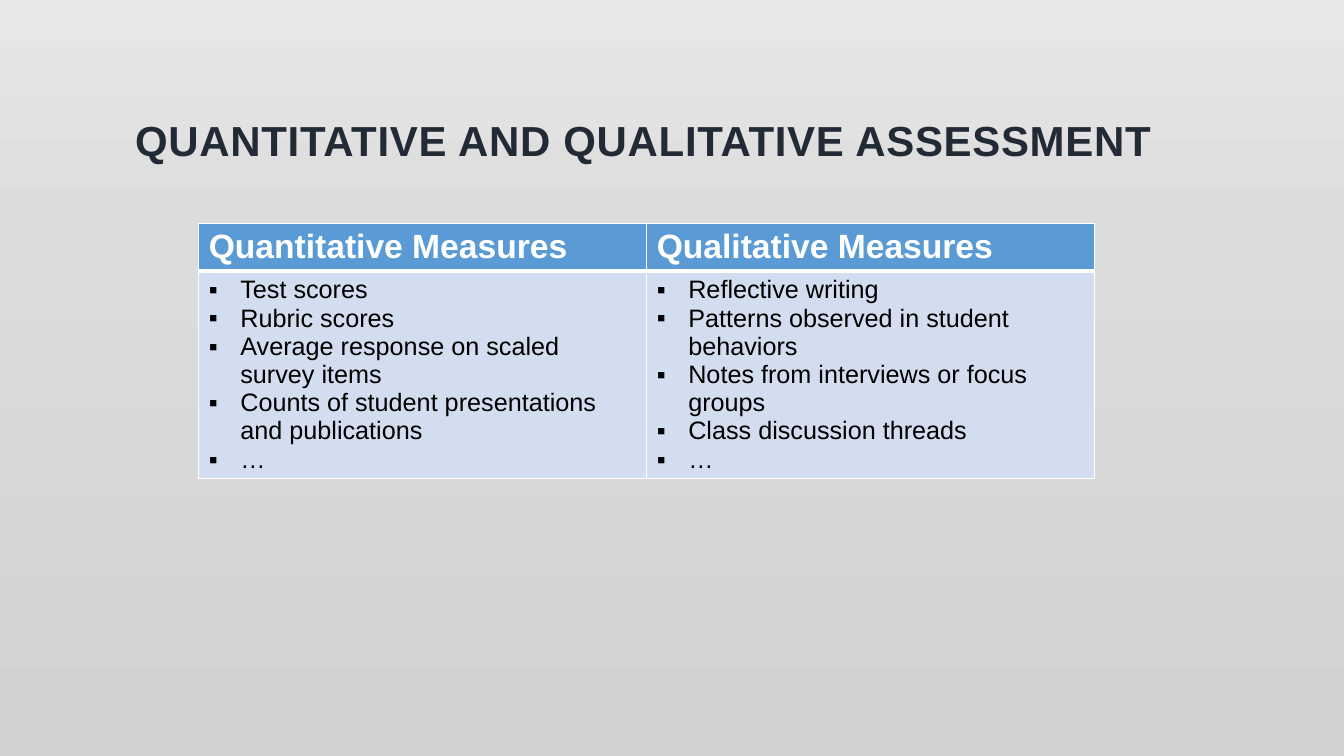
"""Builds the slide on quantitative and qualitative assessment."""
from copy import deepcopy

from pptx import Presentation
from pptx.dml.color import RGBColor as RGB
from pptx.enum.text import MSO_ANCHOR as Anchor, MSO_AUTO_SIZE as AutoSize, PP_ALIGN as Align
from pptx.oxml.ns import qn
from pptx.util import Pt
from lxml.etree import SubElement

COLORS = {"title": "222A35", "header": "5B9BD5", "body": "D2DEEF",
          "white": "FFFFFF", "black": "000000"}
BACKGROUND = [(0, "E8E7E7"), (0.31, "DDDCDC"), (1, "D2D1D1")]
FORMATS = {
    "title": {"name": "Arial", "size": Pt(30), "bold": True},
    "header": {"name": "Arial", "size": Pt(24), "bold": True},
    "body": {"name": "Arial", "size": Pt(18), "bold": False},
}
MEASURES = {
    "Quantitative Measures": [
        "Test scores", "Rubric scores", "Average response on scaled survey items",
        "Counts of student presentations and publications", "…"],
    "Qualitative Measures": [
        "Reflective writing", "Patterns observed in student behaviors",
        "Notes from interviews or focus groups", "Class discussion threads", "…"],
}


def set_font(font, style, color):
    for key, value in FORMATS[style].items():
        setattr(font, key, value)
    font.color.rgb = RGB.from_string(COLORS[color])


def set_background(s):
    fill = s.background.fill
    fill.gradient()
    fill.gradient_angle = 270
    stops = s.background._cSld.find(".//" + qn("a:gsLst"))
    stops.insert(1, deepcopy(stops[0]))
    for stop, (position, color) in zip(fill.gradient_stops, BACKGROUND):
        stop.position = position
        stop.color.rgb = RGB.from_string(color)


def add_title(s, text):
    sp = s.shapes.title
    sp.left, sp.top, sp.width, sp.height = Pt(89.3), Pt(31.7), Pt(832.3), Pt(90)
    tf = sp.text_frame
    tf.auto_size = AutoSize.NONE
    tf.word_wrap = True
    tf.vertical_anchor = Anchor.BOTTOM
    p = tf.paragraphs[0]
    p.alignment = Align.LEFT
    r = p.add_run()
    r.text = text
    set_font(r.font, "title", "title")
    r.font._element.set("spc", "50")


def set_borders(cell, widths):
    tcPr = cell._tc.get_or_add_tcPr()
    for index, (side, width) in enumerate(widths.items()):
        ln = SubElement(tcPr, qn("a:ln" + side), w=str(Pt(width)))
        fill = SubElement(ln, qn("a:solidFill"))
        SubElement(fill, qn("a:srgbClr"), val=COLORS["white"])
        tcPr.remove(ln)
        tcPr.insert(index, ln)


def add_bullet(p):
    pPr = p._p.get_or_add_pPr()
    pPr.set("marL", str(Pt(22.5)))
    pPr.set("indent", str(Pt(-22.5)))
    SubElement(pPr, qn("a:buFont"), typeface="Arial")
    SubElement(pPr, qn("a:buChar"), char="▪")


def fill_cell(cell, lines, style, color, bottom, bullets=False):
    cell.fill.solid()
    cell.fill.fore_color.rgb = RGB.from_string(COLORS[style])
    set_borders(cell, {"L": 1, "R": 1, "T": 1 if style == "header" else 3, "B": bottom})
    tf = cell.text_frame
    for index, line in enumerate(lines):
        p = tf.add_paragraph() if index else tf.paragraphs[0]
        if bullets:
            add_bullet(p)
        r = p.add_run()
        r.text = line
        set_font(r.font, style, color)


def add_measures(s):
    table = s.shapes.add_table(2, len(MEASURES), Pt(142), Pt(159.5), Pt(640), Pt(182)).table
    for row, height in zip(table.rows, (34, 148)):
        row.height = Pt(height)
    for col, (heading, items) in enumerate(MEASURES.items()):
        table.columns[col].width = Pt(320)
        fill_cell(table.cell(0, col), [heading], "header", "white", 3)
        fill_cell(table.cell(1, col), items, "body", "black", 1, bullets=True)


def main():
    prs = Presentation()
    prs.slide_width, prs.slide_height = Pt(960), Pt(540)
    s = prs.slides.add_slide(prs.slide_layouts[5])
    set_background(s)
    add_title(s, "QUANTITATIVE AND QUALITATIVE ASSESSMENT")
    add_measures(s)
    prs.save("out.pptx")


if __name__ == "__main__":
    main()
